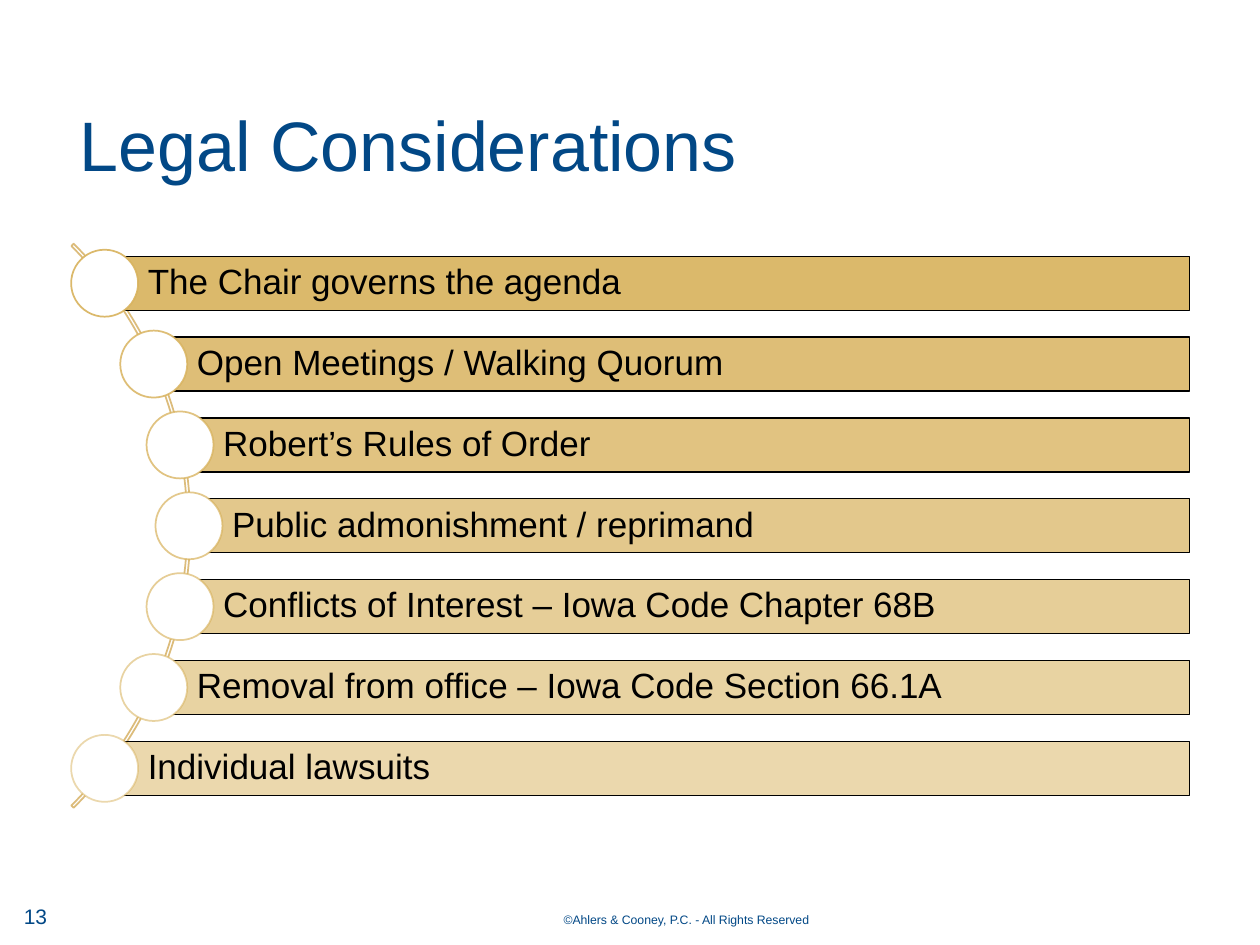
from dataclasses import dataclass

from lxml import etree
from pptx import Presentation
from pptx import util as u
from pptx.dml.color import RGBColor
from pptx.enum import shapes, text
from pptx.oxml.ns import qn


@dataclass(frozen=True)
class Theme:
    font: str = "Arial"
    blue: str = "024886"
    gold: str = "D8B25C"
    arc: str = "DCBC7B"
    white: str = "FFFFFF"
    black: str = "000000"
    title_size: int = 40
    topic_size: int = 20
    number_size: int = 12
    footer_size: int = 7


THEME = Theme()

TOPICS = [
    "The Chair governs the agenda",
    "Open Meetings / Walking Quorum",
    "Robert’s Rules of Order",
    "Public admonishment / reprimand",
    "Conflicts of Interest – Iowa Code Chapter 68B",
    "Removal from office – Iowa Code Section 66.1A",
    "Individual lawsuits",
]

# Lengths in centimetres
CURVE = [2.11, 3.1, 3.63, 3.81]
BAR_LEFTS = CURVE + CURVE[-2::-1]
BAR_RIGHT = 23.98
BAR_HEIGHT = 1.09
FIRST_CENTRE = 5.71
ROW_PITCH = 1.63
CIRCLE = 1.35
ARC_SIZE = 16.08
ARC_LEFT = -12.24
FIRST_ALPHA, LAST_ALPHA = 90, 50


def set_alpha(color_format, percent):
    color = color_format._xFill.find(qn("a:srgbClr"))
    etree.SubElement(color, qn("a:alpha"), val=str(round(percent * 1000)))


def write(box, content, size, color, align=text.PP_ALIGN.LEFT, spacing=1.0, **frame_format):
    frame = box.text_frame
    frame_format = {"word_wrap": True, "auto_size": text.MSO_AUTO_SIZE.NONE,
                    "vertical_anchor": text.MSO_ANCHOR.MIDDLE, **frame_format}
    for name, value in frame_format.items():
        setattr(frame, name, value)
    para = frame.paragraphs[0]
    para.alignment, para.line_spacing = align, spacing
    span = para.add_run()
    span.text = content
    for name, value in {"name": THEME.font, "size": u.Pt(size)}.items():
        setattr(span.font, name, value)
    span.font.color.rgb = RGBColor.from_string(color)


def add_outlined(page, kind, place, line, width, fill=None, fill_alpha=100, line_alpha=100):
    """Add a preset shape; place is left, top, width, height in centimetres."""
    shape = page.shapes.add_shape(kind, *map(u.Cm, place))
    shape.shadow.inherit = False
    shape.line.color.rgb = RGBColor.from_string(line)
    shape.line.width = u.Pt(width)
    if fill:
        shape.fill.solid()
        shape.fill.fore_color.rgb = RGBColor.from_string(fill)
    else:
        shape.fill.background()
    for owner, alpha in ((shape.fill, fill_alpha), (shape.line.fill, line_alpha)):
        if alpha < 100:
            set_alpha(owner.fore_color, alpha)
    return shape


def add_title(page, content):
    title = page.shapes.title
    place = {"left": 1.35, "top": 1.6, "width": 23.47, "height": 2.79}
    for name, value in place.items():
        setattr(title, name, u.Cm(value))
    write(title, content, THEME.title_size, THEME.blue, spacing=0.9)


def add_note(page, place, content, size, **options):
    box = page.shapes.add_textbox(*map(u.Cm, place))
    write(box, content, size, THEME.blue, **options)


def add_arc(page):
    middle = FIRST_CENTRE + ROW_PITCH * (len(TOPICS) - 1) / 2
    place = (ARC_LEFT, middle - ARC_SIZE / 2, ARC_SIZE, ARC_SIZE)
    arc = add_outlined(page, shapes.MSO_SHAPE.BLOCK_ARC, place, THEME.arc, 1)
    for index, value in enumerate((189, 27, 0.004)):
        arc.adjustments[index] = value


def add_topic(page, index, content):
    """Add one bar with the circle centred on its left end."""
    left = BAR_LEFTS[index]
    centre = FIRST_CENTRE + index * ROW_PITCH
    alpha = FIRST_ALPHA + (LAST_ALPHA - FIRST_ALPHA) * index / (len(TOPICS) - 1)
    bar = add_outlined(page, shapes.MSO_SHAPE.RECTANGLE,
                       (left, centre - BAR_HEIGHT / 2, BAR_RIGHT - left, BAR_HEIGHT),
                       THEME.black, 0.75, THEME.gold, fill_alpha=alpha)
    write(bar, content, THEME.topic_size, THEME.black, spacing=0.9,
          margin_left=u.Cm(0.87), margin_right=u.Cm(0.14),
          margin_top=u.Cm(0.14), margin_bottom=u.Cm(0.14))
    add_outlined(page, shapes.MSO_SHAPE.OVAL,
                 (left - CIRCLE / 2, centre - CIRCLE / 2, CIRCLE, CIRCLE),
                 THEME.gold, 1, THEME.white, line_alpha=alpha)


def main():
    deck = Presentation()
    deck.slide_width, deck.slide_height = u.Cm(25.4), u.Cm(19.05)
    page = deck.slides.add_slide(deck.slide_layouts[5])
    add_title(page, "Legal Considerations")
    add_note(page, (0.23, 17.96, 5.72, 1.02), "13", THEME.number_size)
    add_note(page, (9.83, 18.26, 6.73, 0.76), "©Ahlers & Cooney, P.C. - All Rights Reserved",
             THEME.footer_size, align=text.PP_ALIGN.RIGHT,
             vertical_anchor=text.MSO_ANCHOR.TOP)
    add_arc(page)
    for index, content in enumerate(TOPICS):
        add_topic(page, index, content)
    deck.save("out.pptx")


if __name__ == "__main__":
    main()
